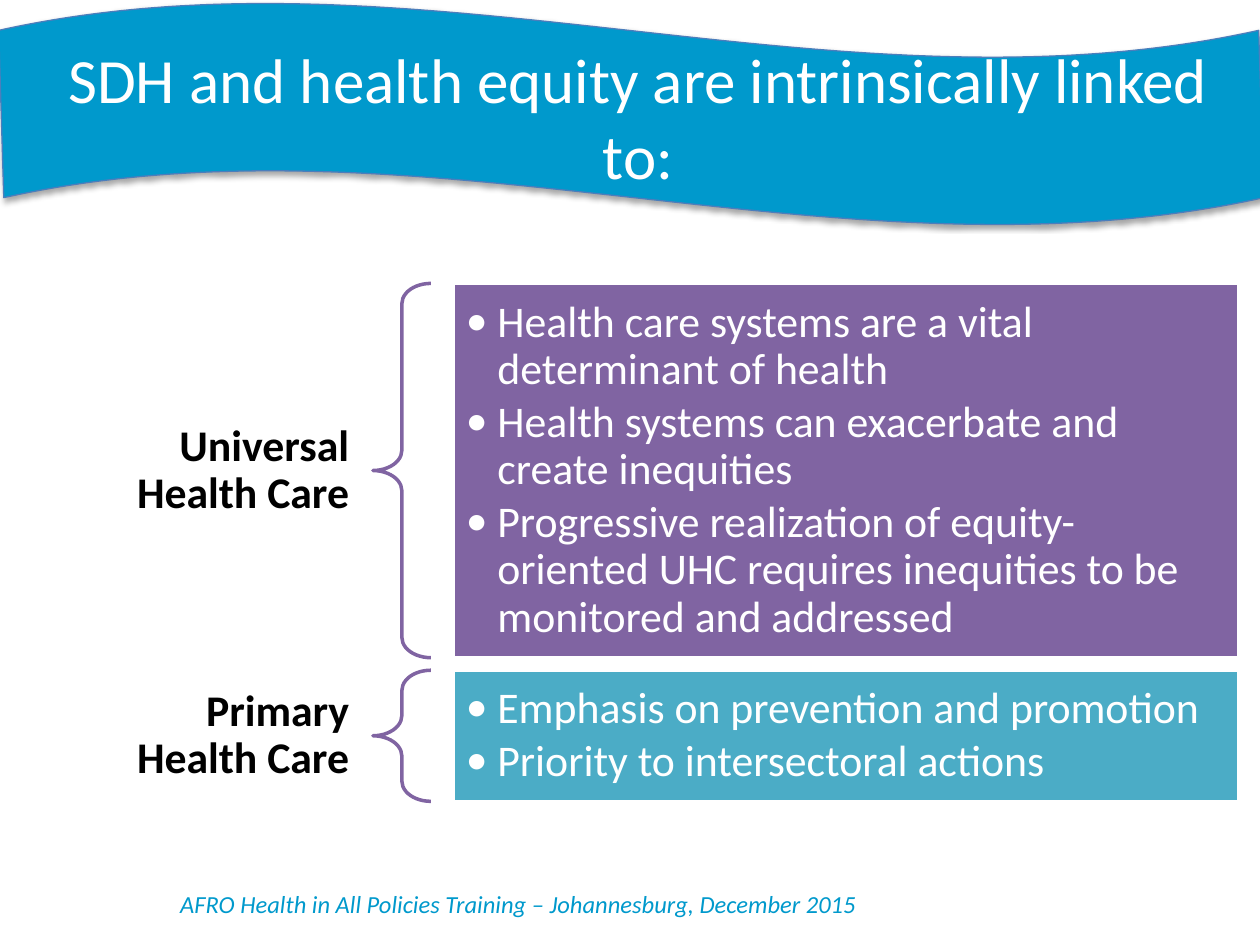
"""Build the slide linking social determinants of health and health equity to care."""
from dataclasses import dataclass

from lxml import etree
from pptx import Presentation
from pptx import util as u
from pptx.dml.color import RGBColor
from pptx.enum import shapes, text
from pptx.oxml import parse_xml
from pptx.oxml.ns import nsdecls, qn

FONT = "Calibri"
BLUE, PURPLE, TEAL, WHITE, BLACK = "0099CC", "8064A2", "4BACC6", "FFFFFF", "000000"
CENTER, RIGHT, LEFT = text.PP_ALIGN.CENTER, text.PP_ALIGN.RIGHT, text.PP_ALIGN.LEFT


@dataclass
class CareGroup:
    label: str
    points: list[str]
    top: float
    height: float
    fill: str


GROUPS = [
    CareGroup("Universal Health Care", [
        "Health care systems are a vital determinant of health",
        "Health systems can exacerbate and create inequities",
        "Progressive realization of equity-oriented UHC requires inequities "
        "to be monitored and addressed",
    ], 2.25, 2.97, PURPLE),
    CareGroup("Primary Health Care", [
        "Emphasis on prevention and promotion",
        "Priority to intersectoral actions",
    ], 5.32, 1.04, TEAL),
]


def color(value: str) -> RGBColor:
    return RGBColor.from_string(value)


def add_shape(page, kind, left: float, top: float, width: float, height: float,
              fill: str | None, line: str, weight: float):
    shape = page.shapes.add_shape(kind, *map(u.Inches, (left, top, width, height)))
    shape.shadow.inherit = False
    if fill:
        shape.fill.solid()
        shape.fill.fore_color.rgb = color(fill)
    else:
        shape.fill.background()
    shape.line.color.rgb = color(line)
    shape.line.width = u.Pt(weight)
    return shape


def add_box(page, left: float, top: float, width: float, height: float):
    return page.shapes.add_textbox(*map(u.Inches, (left, top, width, height)))


def set_margins(box, side: float, end: float) -> None:
    frame = box.text_frame
    frame.margin_left = frame.margin_right = u.Inches(side)
    frame.margin_top = frame.margin_bottom = u.Inches(end)


def write(box, lines: list[str], size: float, ink: str, align, bold: bool = False,
          italic: bool = False, spacing: float = 1, after: float = 0,
          bullets: bool = False) -> None:
    frame = box.text_frame
    frame.word_wrap = True
    frame.vertical_anchor = text.MSO_ANCHOR.MIDDLE
    for index, line in enumerate(lines):
        para = frame.paragraphs[0] if index == 0 else frame.add_paragraph()
        para.text = line
        para.alignment = align
        para.line_spacing = spacing
        para.space_after = u.Pt(after)
        if bullets:
            props = para._p.get_or_add_pPr()
            props.set("marL", str(u.Inches(0.25)))
            props.set("indent", str(u.Inches(-0.25)))
            etree.SubElement(props, qn("a:buFont")).set("typeface", FONT)
            etree.SubElement(props, qn("a:buChar")).set("char", "•")
        font = para.font
        font.name, font.size, font.bold, font.italic = FONT, u.Pt(size), bold, italic
        font.color.rgb = color(ink)


def add_banner(page) -> None:
    wave = add_shape(page, shapes.MSO_SHAPE.WAVE, -0.01, 0.02, 10.04, 1.77,
                     BLUE, "4B7EBC", 0.75)
    wave.adjustments[0], wave.adjustments[1] = 0.125, 0.002
    effects = wave._element.spPr.find(qn("a:effectLst"))
    effects.append(parse_xml(
        f'<a:outerShdw {nsdecls("a")} blurRad="{u.Pt(3.1)}" dist="{u.Pt(1.8)}" '
        f'dir="5400000" rotWithShape="0"><a:srgbClr val="{BLACK}">'
        '<a:alpha val="35000"/></a:srgbClr></a:outerShdw>'))
    title = add_box(page, 0.33, 0.3, 9.47, 1.25)
    write(title, ["SDH and health equity are intrinsically linked to:"], 36, WHITE, CENTER)


def add_group(page, group: CareGroup) -> None:
    label_height = 0.9
    label_top = group.top + (group.height - label_height) / 2
    label = add_box(page, 0.67, label_top, 2.29, label_height)
    set_margins(label, 0.19, 0.07)
    write(label, [group.label], 25, BLACK, RIGHT, bold=True, spacing=0.9)
    brace = add_shape(page, shapes.MSO_SHAPE.LEFT_BRACE, 2.96, group.top, 0.46,
                      group.height, None, PURPLE, 2)
    brace.adjustments[0], brace.adjustments[1] = 0.35, 0.5
    panel = add_shape(page, shapes.MSO_SHAPE.RECTANGLE, 3.6, group.top, 6.23,
                      group.height, group.fill, WHITE, 2)
    set_margins(panel, 0.1, 0.1)
    write(panel, group.points, 25, WHITE, LEFT, spacing=0.9, after=3.25, bullets=True)


def main() -> None:
    deck = Presentation()
    deck.slide_width, deck.slide_height = u.Inches(10), u.Inches(7.5)
    page = deck.slides.add_slide(deck.slide_layouts[6])
    footer = add_box(page, 0.08, 7, 8.07, 0.34)
    write(footer, ["AFRO Health in All Policies Training – Johannesburg, December 2015"],
          14, BLUE, CENTER, italic=True)
    add_banner(page)
    for group in GROUPS:
        add_group(page, group)
    deck.save("out.pptx")


if __name__ == "__main__":
    main()
